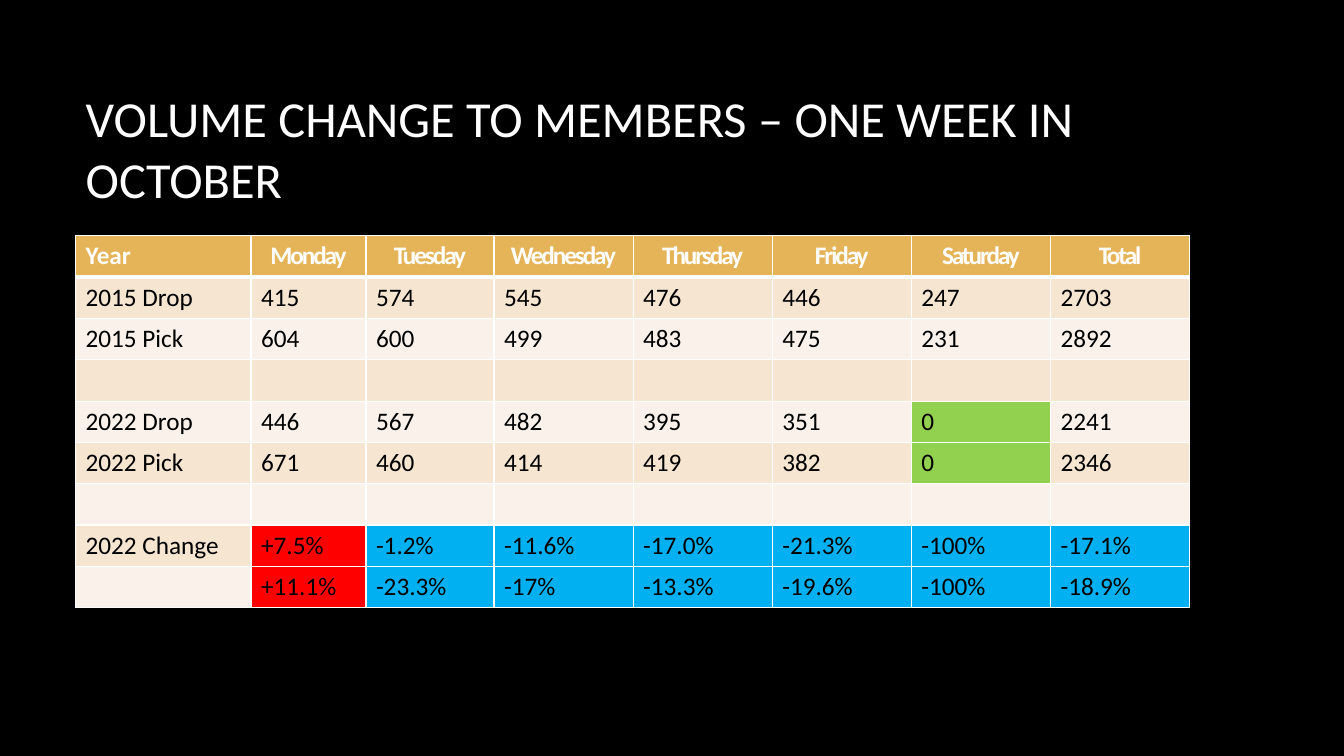
from lxml.etree import SubElement
from pptx import Presentation
from pptx.dml.color import RGBColor
from pptx.enum.text import MSO_ANCHOR, MSO_AUTO_SIZE, PP_ALIGN
from pptx.oxml.ns import qn
from pptx.util import Inches, Pt

FONT = "Calibri"
COLORS = {
    "background": "000000",
    "title": "FFFFFF",
    "header": "E5B458",
    "header_text": "FFFFFF",
    "body_text": "000000",
    "odd_row": "F5E5D1",
    "even_row": "FAF2EA",
    "border": "FFFFFF",
    "closed": "92D050",
    "increase": "FF0000",
    "decrease": "00B0F0",
}
COLUMN_WIDTHS = [1.74, 1.14, 1.27] + [1.38] * 5
ROW_HEIGHT = 0.41
ROWS = [
    ["Year", "Monday", "Tuesday", "Wednesday", "Thursday", "Friday", "Saturday", "Total"],
    ["2015 Drop", "415", "574", "545", "476", "446", "247", "2703"],
    ["2015 Pick", "604", "600", "499", "483", "475", "231", "2892"],
    [""] * 8,
    ["2022 Drop", "446", "567", "482", "395", "351", "0", "2241"],
    ["2022 Pick", "671", "460", "414", "419", "382", "0", "2346"],
    [""] * 8,
    ["2022 Change", "+7.5%", "-1.2%", "-11.6%", "-17.0%", "-21.3%", "-100%", "-17.1%"],
    ["", "+11.1%", "-23.3%", "-17%", "-13.3%", "-19.6%", "-100%", "-18.9%"],
]


def rgb(name):
    return RGBColor.from_string(COLORS[name])


def set_font(paragraph, size, color, bold=False):
    font = paragraph.font
    font.name, font.size, font.bold = FONT, Pt(size), bold
    font.color.rgb = rgb(color)


def fill_name(row, text):
    """Choose a cell's colour from its row and the sign of its value."""
    if row == 0:
        return "header"
    if text == "0":
        return "closed"
    if text.startswith("+"):
        return "increase"
    if text.startswith("-"):
        return "decrease"
    return "odd_row" if row % 2 else "even_row"


def set_borders(cell, row):
    """Draw thin borders, with a thick rule between header and body."""
    widths = {"L": 1, "R": 1, "T": 3 if row == 1 else 1, "B": 3 if row == 0 else 1}
    properties = cell._tc.get_or_add_tcPr()
    for side, width in widths.items():
        line = SubElement(properties, qn(f"a:ln{side}"), w=str(Pt(width)))
        fill = SubElement(line, qn("a:solidFill"))
        SubElement(fill, qn("a:srgbClr"), val=COLORS["border"])


def format_cell(cell, row, column, text):
    set_borders(cell, row)
    cell.fill.solid()
    cell.fill.fore_color.rgb = rgb(fill_name(row, text))
    cell.text = text
    paragraph = cell.text_frame.paragraphs[0]
    is_header = row == 0
    set_font(paragraph, 18, "header_text" if is_header else "body_text", is_header)
    if is_header and column > 0:
        paragraph.alignment = PP_ALIGN.CENTER
        paragraph.runs[0].font._element.set("spc", "-150")


def add_title(slide, text):
    title = slide.shapes.title
    title.left, title.top = Inches(0.75), Inches(0.67)
    title.width, title.height = Inches(11.08), Inches(1.59)
    frame = title.text_frame
    frame.text = text
    frame.word_wrap = True
    frame.auto_size = MSO_AUTO_SIZE.NONE
    frame.vertical_anchor = MSO_ANCHOR.MIDDLE
    paragraph = frame.paragraphs[0]
    paragraph.alignment = PP_ALIGN.LEFT
    set_font(paragraph, 36, "title")


def add_volume_table(slide):
    table = slide.shapes.add_table(
        len(ROWS), len(COLUMN_WIDTHS), Inches(0.75), Inches(2.34),
        Inches(sum(COLUMN_WIDTHS)), Inches(ROW_HEIGHT * len(ROWS)),
    ).table
    for column, width in zip(table.columns, COLUMN_WIDTHS):
        column.width = Inches(width)
    for row, texts in enumerate(ROWS):
        for column, text in enumerate(texts):
            format_cell(table.cell(row, column), row, column, text)


def main():
    presentation = Presentation()
    presentation.slide_width = Inches(13.33)
    presentation.slide_height = Inches(7.5)
    slide = presentation.slides.add_slide(presentation.slide_layouts[5])
    slide.background.fill.solid()
    slide.background.fill.fore_color.rgb = rgb("background")
    add_title(slide, "VOLUME CHANGE TO MEMBERS – ONE WEEK IN OCTOBER")
    add_volume_table(slide)
    presentation.save("out.pptx")


if __name__ == "__main__":
    main()
